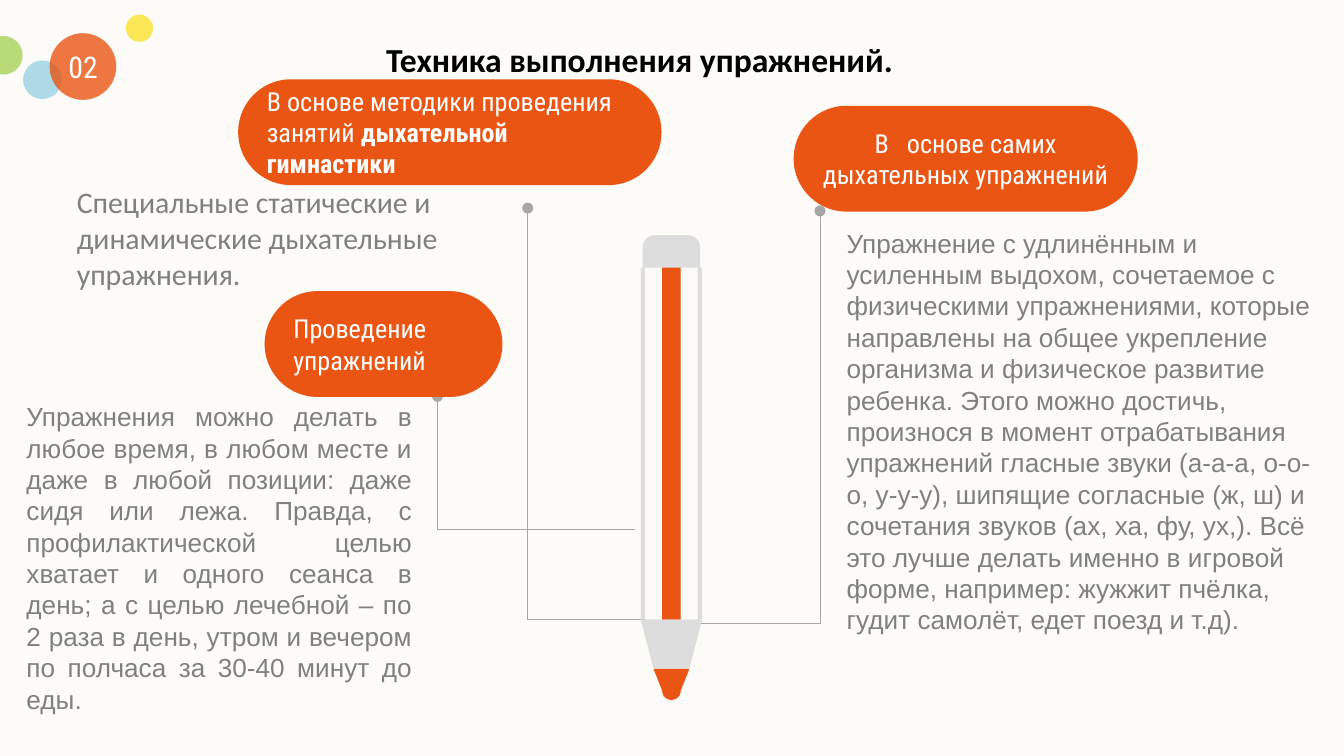
import math

import pptx
import pptx.dml.color
import pptx.enum.shapes
import pptx.enum.text
import pptx.oxml
import pptx.util
from lxml import etree

Pt = pptx.util.Pt
Shape = pptx.enum.shapes.MSO_SHAPE
Align = pptx.enum.text.PP_ALIGN
Anchor = pptx.enum.text.MSO_ANCHOR
AutoSize = pptx.enum.text.MSO_AUTO_SIZE

THEME = {
    "paper": "FCFBF7", "accent": "EA5514", "grey": "DDDDDD", "line": "A6A6A6",
    "yellow": "FBE22D", "green": "A9D25A", "blue": "98D2E3",
    "title": {"size": 18, "name": "Calibri", "color": "000000", "bold": True},
    "number": {"size": 16, "name": "Roboto Condensed", "color": "FFFFFF"},
    "pill": {"size": 14, "name": "Roboto Condensed", "color": "FFFFFF"},
    "lead": {"size": 16, "name": "Calibri", "color": "808080"},
    "body": {"size": 14, "name": "Arial", "color": "808080"},
}

# Content: boxes are (left, top, width, height) in points
TITLE = "Техника выполнения упражнений."
TITLE_BOX, TITLE_INDENT = (141.8, 20.9, 466.6, 21.6), 65

PILL_HEIGHT = 56.7
PILLS = [  # left, top, width, alignment, spans as (text, bold)
    (425.2, 56.7, 184.3, Align.CENTER, [("В   основе самих дыхательных упражнений", False)]),
    (127.6, 42.5, 226.8, Align.LEFT, [("В основе методики проведения занятий ", False),
                                      ("дыхательной гимнастики", True)]),
    (141.8, 156, 127.4, Align.LEFT, [("Проведение упражнений", False)]),
]

TEXTS = [  # box, format, alignment, text
    ((453.6, 121.7, 254.9, 218.2), "body", Align.LEFT,
     "Упражнение с удлинённым и усиленным выдохом, сочетаемое с физическими "
     "упражнениями, которые направлены на общее укрепление организма и физическое "
     "развитие ребенка. Этого можно достичь, произнося в момент отрабатывания "
     "упражнений гласные звуки (а-а-а, о-о-о, у-у-у), шипящие согласные (ж, ш) и "
     "сочетания звуков (ах, ха, фу, ух,). Всё это лучше делать именно в игровой "
     "форме, например: жужжит пчёлка, гудит самолёт, едет поезд и т.д)."),
    ((41.2, 98.6, 213.8, 57.6), "lead", Align.LEFT,
     "Специальные статические и динамические дыхательные упражнения."),
    ((14.2, 214.6, 206.6, 167.8), "body", Align.JUSTIFY,
     "Упражнения можно делать в любое время, в любом месте и даже в любой позиции: "
     "даже сидя или лежа. Правда, с профилактической целью хватает и одного сеанса в "
     "день; а с целью лечебной – по 2 раза в день, утром и вечером по полчаса за 30-40 "
     "минут до еды."),
]
NUMBER = ((31.5, 25.9, 26, 19.2), "number", Align.CENTER, "02")

LEADERS = [  # start x, start y, end x, end y: down, then across
    (282.7, 111.5, 354, 331.9),
    (234.4, 212.4, 340.2, 283.9),
    (439.3, 113, 368, 333.9),
]

CIRCLES = [  # left, top, diameter, colour
    (67.5, 7.9, 14.5, "yellow"), (-8.5, 19.3, 20.7, "green"),
    (12.4, 32.4, 20.7, "blue"), (26.6, 17.8, 35.7, "accent"),
]
CIRCLE_ALPHA = 80

# Pencil, symmetrical about its axis
AXIS = 359.7
CAP_TOP, BARREL_TOP, CONE_TOP, LEAD_TOP = 126, 143.4, 332, 358.3
TIP_CENTRE, TIP_RADIUS = 370, 5
BARREL_BANDS = [(-16.4, 32.8, "grey"), (-14.2, 9.2, "paper"),
                (4.9, 9.2, "paper"), (-5, 9.9, "accent")]


def colour(name):
    return pptx.dml.color.RGBColor.from_string(THEME.get(name, name))


def finish(shape, fill):
    shape.shadow.inherit = False
    shape.line.fill.background()
    shape.fill.solid()
    shape.fill.fore_color.rgb = colour(fill)
    return shape


def add_shape(kind, box, fill, radius=None):
    shape = finish(page.shapes.add_shape(kind, *map(Pt, box)), fill)
    if radius is not None:
        shape.adjustments[0] = radius
    return shape


def add_outline(points, close=True):
    points = [(Pt(x), Pt(y)) for x, y in points]
    builder = page.shapes.build_freeform(*points[0])
    builder.add_line_segments(points[1:], close=close)
    return builder.convert_to_shape()


def write(frame, spans, style, align):
    para = frame.paragraphs[0]
    para.alignment = align
    for text, bold in spans:
        span = para.add_run()
        span.text = text
        values = {"bold": bold, **THEME[style]}
        span.font.color.rgb = colour(values.pop("color"))
        values["size"] = Pt(values["size"])
        for key, value in values.items():
            setattr(span.font, key, value)


def set_frame(frame, left=0):
    values = {"word_wrap": True, "vertical_anchor": Anchor.TOP,
              "auto_size": AutoSize.SHAPE_TO_FIT_TEXT, "margin_left": Pt(left),
              "margin_top": 0, "margin_right": 0, "margin_bottom": 0}
    for key, value in values.items():
        setattr(frame, key, value)


def add_text(box, style, align, text):
    frame = page.shapes.add_textbox(*map(Pt, box)).text_frame
    set_frame(frame)
    write(frame, [(text, False)], style, align)


deck = pptx.Presentation()
deck.slide_width, deck.slide_height = Pt(720), Pt(405)
page = deck.slides.add_slide(deck.slide_layouts[5])
page.background.fill.solid()
page.background.fill.fore_color.rgb = colour("paper")

# Title
title = page.shapes.title
for side, value in zip(("left", "top", "width", "height"), TITLE_BOX):
    setattr(title, side, Pt(value))
set_frame(title.text_frame, TITLE_INDENT)
write(title.text_frame, [(TITLE, False)], "title", Align.LEFT)

# Leader lines with a dot at the start
for x1, y1, x2, y2 in LEADERS:
    leader = add_outline([(x1, y1), (x1, y2), (x2, y2)], close=False)
    leader.shadow.inherit = False
    leader.fill.background()
    leader.line.color.rgb = colour("line")
    leader.line.width = Pt(0.5)
    etree.SubElement(leader.line._get_or_add_ln(), pptx.oxml.ns.qn("a:headEnd"), type="oval")

# Headings and paragraphs
for left, top, width, align, spans in PILLS:
    pill = add_shape(Shape.ROUNDED_RECTANGLE, (left, top, width, PILL_HEIGHT), "accent", 0.5)
    pill.text_frame.word_wrap = True
    pill.text_frame.vertical_anchor = Anchor.MIDDLE
    write(pill.text_frame, spans, "pill", align)
for item in TEXTS:
    add_text(*item)

# Pencil
add_shape(Shape.ROUNDED_RECTANGLE, (AXIS - 15.4, CAP_TOP, 30.8, 54), "grey", 0.21)
for offset, width, fill in BARREL_BANDS:
    add_shape(Shape.RECTANGLE, (AXIS + offset, BARREL_TOP, width, CONE_TOP - BARREL_TOP), fill)
finish(add_outline([(AXIS - 16.4, CONE_TOP), (AXIS - 9.6, LEAD_TOP),
                    (AXIS + 9.6, LEAD_TOP), (AXIS + 16.4, CONE_TOP)]), "grey")
tip = [(AXIS + TIP_RADIUS * math.cos(math.radians(angle)),
        TIP_CENTRE + TIP_RADIUS * math.sin(math.radians(angle)))
       for angle in range(0, 181, 15)]
finish(add_outline([(AXIS - 9.6, LEAD_TOP), (AXIS + 9.6, LEAD_TOP), *tip]), "accent")

# Corner circles and slide number
for left, top, size, fill in CIRCLES:
    circle = add_shape(Shape.OVAL, (left, top, size, size), fill)
    value = circle.fill._xPr.find(".//" + pptx.oxml.ns.qn("a:srgbClr"))
    etree.SubElement(value, pptx.oxml.ns.qn("a:alpha"), val=str(CIRCLE_ALPHA * 1000))
add_text(*NUMBER)

deck.save("out.pptx")
